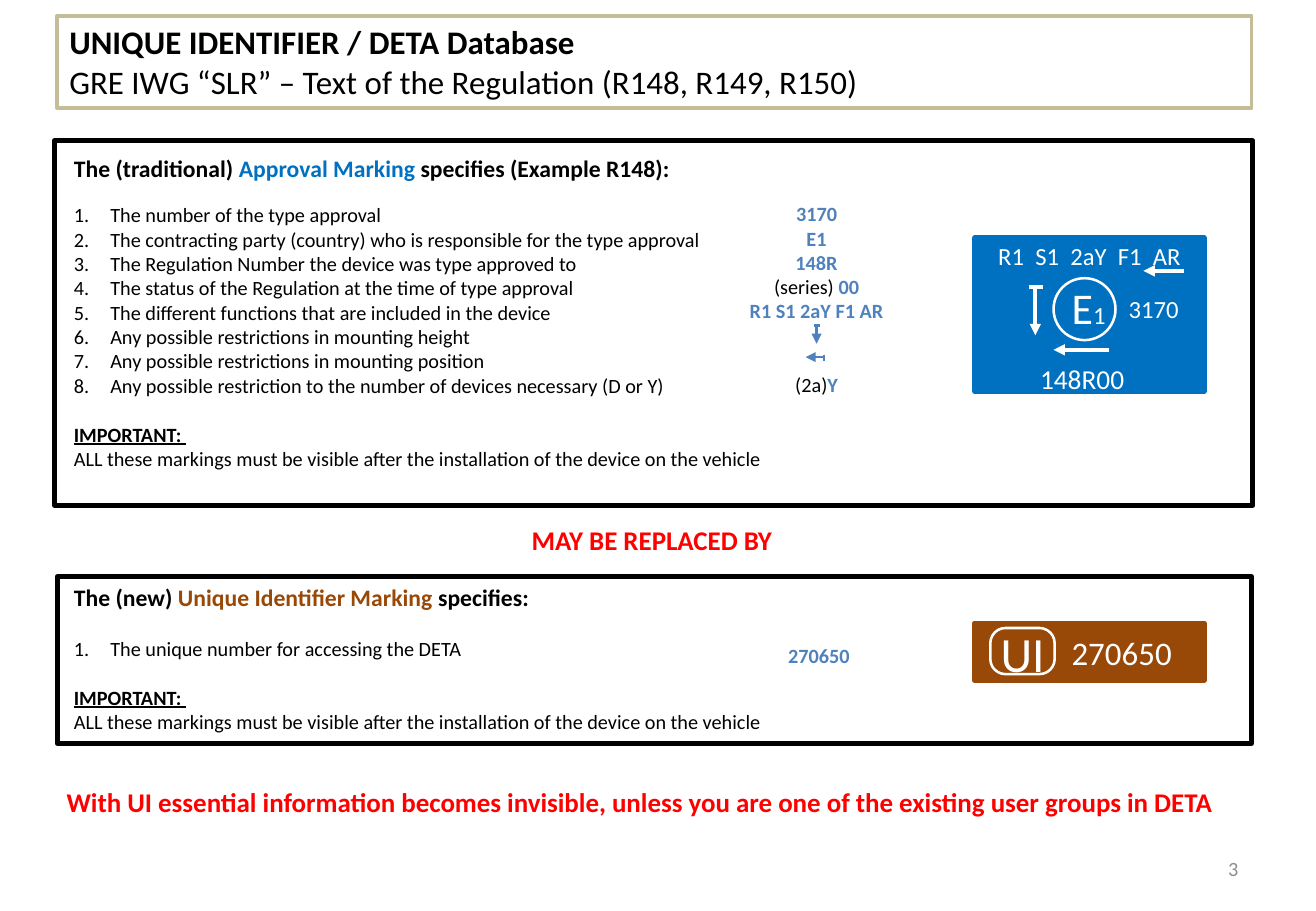
import pptx
import pptx.dml.color
import pptx.enum.shapes
import pptx.enum.text
import pptx.oxml.ns
import pptx.util
from lxml import etree

Inches = pptx.util.Inches
Pt = pptx.util.Pt
ALIGN = pptx.enum.text.PP_ALIGN
ANCHOR = pptx.enum.text.MSO_ANCHOR
SHAPE = pptx.enum.shapes.MSO_SHAPE
FONT = "Calibri"
COLORS = {"black": "000000", "white": "FFFFFF", "red": "FF0000", "blue": "0070C0",
          "brown": "984807", "value": "4F81BD", "sand": "C4BD97", "gray": "8C8C8C"}
APPROVAL_ITEMS = [
    "The number of the type approval",
    "The contracting party (country) who is responsible for the type approval",
    "The Regulation Number the device was type approved to",
    "The status of the Regulation at the time of type approval",
    "The different functions that are included in the device",
    "Any possible restrictions in mounting height",
    "Any possible restrictions in mounting position",
    "Any possible restriction to the number of devices necessary (D or Y)",
]
ROW = 14.65


def rgb(name):
    """Return the named colour."""
    return pptx.dml.color.RGBColor.from_string(COLORS[name])


def add_child(parent, tag, **attributes):
    """Append a drawing element to an XML parent."""
    return etree.SubElement(parent, pptx.oxml.ns.qn(tag), attributes)


def add_span(para, text, size, color="black", bold=False, underline=False):
    """Append one formatted run."""
    span = para.add_run()
    span.text = text
    span.font.name = FONT
    span.font.size = Pt(size)
    span.font.bold = bold
    span.font.underline = underline
    span.font.color.rgb = rgb(color)
    return span


def add_para(frame, spans, align=ALIGN.LEFT, before=0, numbered=False):
    """Append a paragraph of spans, using the empty first one if there is one."""
    first = frame.paragraphs[0]
    para = first if not first.runs else frame.add_paragraph()
    para.alignment = align
    para.space_before = Pt(before)
    if numbered:
        properties = para._p.get_or_add_pPr()
        properties.set("marL", str(Inches(0.3)))
        properties.set("indent", str(-Inches(0.3)))
        add_child(properties, "a:buFont", typeface="+mj-lt")
        add_child(properties, "a:buAutoNum", type="arabicPeriod")
    for span in spans:
        add_span(para, *span)
    return para


def add_text(page, box, spans=(), align=ALIGN.LEFT, anchor=ANCHOR.TOP, wrap=True):
    """Add a text box and return its frame."""
    frame = page.shapes.add_textbox(*map(Inches, box)).text_frame
    frame.word_wrap = wrap
    frame.vertical_anchor = anchor
    if spans:
        add_para(frame, spans, align)
    return frame


def add_outline(page, kind, box, line, width, fill=None):
    """Add a preset shape, unfilled unless a fill is named."""
    shape = page.shapes.add_shape(kind, *map(Inches, box))
    shape.shadow.inherit = False
    if fill:
        shape.fill.solid()
        shape.fill.fore_color.rgb = rgb(fill)
    else:
        shape.fill.background()
    shape.line.color.rgb = rgb(line)
    shape.line.width = Pt(width)
    return shape


def add_line(page, origin, start, end, color, width, arrow=False):
    """Add a line between two points measured from the origin."""
    left, top = origin
    line = page.shapes.add_connector(
        pptx.enum.shapes.MSO_CONNECTOR.STRAIGHT,
        Inches(left + start[0]), Inches(top + start[1]),
        Inches(left + end[0]), Inches(top + end[1]))
    line.line.color.rgb = rgb(color)
    line.line.width = Pt(width)
    if arrow:
        add_child(line.line._get_or_add_ln(), "a:tailEnd", type="triangle")
    add_child(line._element.spPr, "a:effectLst")


def add_title(page, box):
    """Place and format the title placeholder."""
    title = page.shapes.title
    title.left, title.top, title.width, title.height = map(Inches, box)
    title.line.color.rgb = rgb("sand")
    title.line.width = Pt(2.25)
    frame = title.text_frame
    frame.auto_size = pptx.enum.text.MSO_AUTO_SIZE.NONE
    frame.vertical_anchor = ANCHOR.TOP
    add_para(frame, [("UNIQUE IDENTIFIER / DETA Database", 19.5, "black", True)])
    add_para(frame, [("GRE IWG “SLR” – Text of the Regulation (R148, R149, R150)", 19.5)])


def add_description(page, box, heading, items, gap):
    """Add a heading, its numbered items and the visibility note."""
    lead, subject, ending, color = heading
    frame = add_text(page, box, [(lead, 14, "black", True), (subject, 14, color, True),
                                 (ending, 14, "black", True)])
    for index, item in enumerate(items):
        add_para(frame, [(item, 12)], before=0 if index else gap, numbered=True)
    add_para(frame, [("IMPORTANT: ", 12, "black", True, True)], before=ROW)
    add_para(frame, [("ALL these markings must be visible after the installation "
                      "of the device on the vehicle", 12)])


def add_approval_values(page, box):
    """Add the example value of each approval item, with two small arrows."""
    rows = [[("3170", 12, "value", True)], [("E1", 12, "value", True)],
            [("148R", 12, "value", True)],
            [("(series)", 12), (" 00", 12, "value", True)],
            [("R1 S1 2aY F1 AR", 12, "value", True)],
            [("(2a)", 12), ("Y", 12, "value", True)]]
    frame = add_text(page, box)
    for spans in rows:
        add_para(frame, spans, ALIGN.CENTER, 2 * ROW if spans is rows[-1] else 0)
    for start, end, arrow in [((0.71, 1.08), (0.71, 1.22), True),
                              ((0.69, 1.07), (0.74, 1.07), False),
                              ((0.76, 1.33), (0.62, 1.33), True),
                              ((0.77, 1.31), (0.77, 1.36), False)]:
        add_line(page, box[:2], start, end, "value", 1.5, arrow)


def add_approval_plate(page, box):
    """Draw the blue traditional approval marking."""
    left, top, width, height = box
    add_outline(page, SHAPE.RECTANGLE, box, "blue", 3, "blue")
    codes = add_text(page, (left, top - 0.03, width, 0.35)).paragraphs[0]
    codes.alignment = ALIGN.CENTER
    for index, code in enumerate(["R1", "S1", "2aY", "F1", "AR"]):
        if index:
            space = add_span(codes, " ", 14.6, "white")
            space.font._element.set("spc", "330")
        add_span(codes, code, 14.6, "white")
    add_text(page, (left + 0.7, top + 0.3, 0.51, 0.54),
             [("E", 26, "white"), ("1", 14.6, "white")])
    add_outline(page, SHAPE.OVAL, (left + 0.65, top + 0.33, 0.51, 0.51), "white", 1.5)
    regulation = add_text(page, (left + 0.43, top + 0.9, 0.91, 0.41),
                          [("148R00", 16.2, "white")], ALIGN.CENTER)
    regulation.paragraphs[0].line_spacing = Pt(24.4)
    for start, end, arrow in [((0.5, 0.39), (0.5, 0.8), True),
                              ((1.72, 0.27), (1.39, 0.27), True),
                              ((0.45, 0.4), (0.56, 0.4), False),
                              ((1.11, 0.92), (0.65, 0.92), True)]:
        add_line(page, (left, top), start, end, "white", 2.25, arrow)
    add_text(page, (left + 1.17, top + 0.41, 0.62, 0.35),
             [("3170", 14.6, "white")], wrap=False)


def add_identifier_plate(page, box):
    """Draw the brown unique identifier marking."""
    left, top, width, height = box
    add_outline(page, SHAPE.RECTANGLE, box, "brown", 3, "brown")
    badge = add_outline(page, SHAPE.ROUNDED_RECTANGLE,
                        (left + 0.13, top + 0.04, 0.53, 0.38), "white", 1.5, "brown")
    badge.adjustments[0] = 0.33
    add_text(page, (left + 0.07, top - 0.05, 0.65, 0.59),
             [("UI", 29.2, "white")], ALIGN.CENTER)
    add_text(page, (left + 0.7, top + 0.03, 1.18, 0.43), [("270650", 19.5, "white")])


def add_approval_panel(page, box):
    """Add the framed panel on the traditional marking."""
    left, top, width, height = box
    add_approval_plate(page, (left + 7.57, top + 0.8, 1.89, 1.26))
    add_description(page, (left + 0.06, top + 0.06, 7, 2.72),
                    ("The (traditional) ", "Approval Marking ", "specifies (Example R148):",
                     "blue"), APPROVAL_ITEMS, 12)
    add_outline(page, SHAPE.RECTANGLE, box, "black", 3)
    add_approval_values(page, (left + 5.56, top + 0.45, 1.42, 1.72))


def add_identifier_panel(page, box):
    """Add the framed panel on the new marking."""
    left, top, width, height = box
    add_identifier_plate(page, (left + 7.55, top + 0.38, 1.89, 0.47))
    add_description(page, (left + 0.04, top, 7, 1.35),
                    ("The (new) ", "Unique Identifier Marking ", "specifies:", "brown"),
                    ["The unique number for accessing the DETA"], ROW)
    add_outline(page, SHAPE.RECTANGLE, box, "black", 3)
    add_text(page, (left + 5.56, top + 0.5, 1.42, 0.3),
             [("270650", 12, "value", True)], ALIGN.CENTER)


def main():
    """Build the slide and save the deck."""
    deck = pptx.Presentation()
    deck.slide_width, deck.slide_height = Inches(10.83), Inches(7.5)
    page = deck.slides.add_slide(deck.slide_layouts[5])
    add_title(page, (0.47, 0.13, 9.83, 0.76))
    add_approval_panel(page, (0.45, 1.16, 9.86, 3))
    add_text(page, (0.45, 4.26, 9.83, 0.37),
             [("MAY BE REPLACED BY", 16, "red", True)], ALIGN.CENTER)
    add_identifier_panel(page, (0.47, 4.75, 9.83, 1.37))
    add_text(page, (0.45, 6.42, 9.83, 0.37),
             [("With UI essential information becomes invisible, unless you are one of "
               "the existing user groups in DETA", 16, "red", True)])
    add_text(page, (7.76, 6.95, 2.53, 0.4), [("3", 12, "gray")], ALIGN.RIGHT, ANCHOR.MIDDLE)
    deck.save("out.pptx")


if __name__ == "__main__":
    main()
